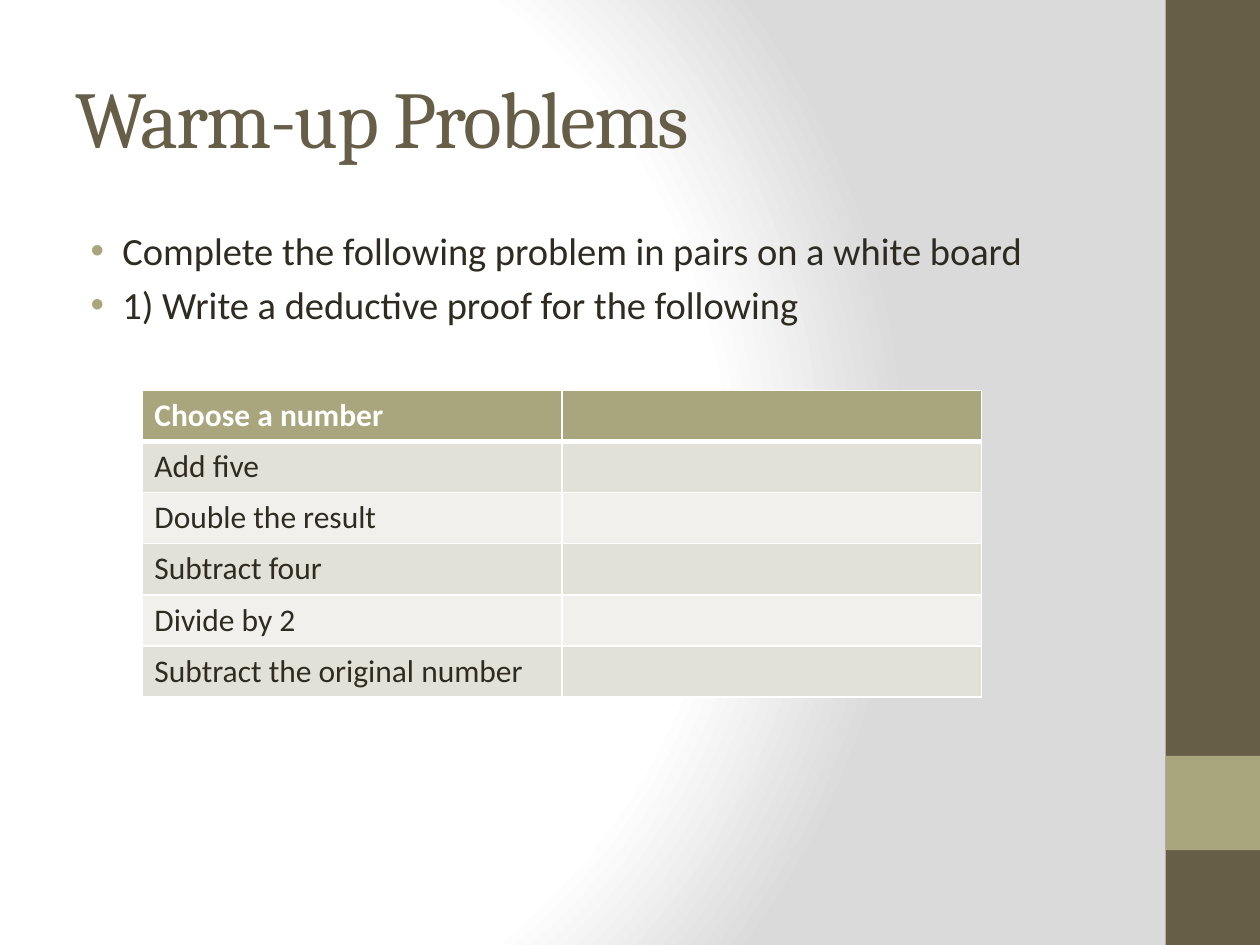
from dataclasses import dataclass

from lxml.etree import SubElement
from pptx import Presentation
from pptx.dml.color import RGBColor
from pptx.enum.shapes import MSO_SHAPE
from pptx.enum.text import MSO_ANCHOR
from pptx.oxml import parse_xml
from pptx.oxml.ns import nsdecls, qn
from pptx.util import Cm, Pt


@dataclass(frozen=True)
class Theme:
    """Colours, fonts and type sizes of the deck."""

    heading_font: str = "Cambria"
    body_font: str = "Calibri"
    title_size: int = 46
    body_size: int = 22
    table_size: int = 18
    dark: str = "675E47"
    accent: str = "A9A57C"
    ink: str = "2F2B20"
    white: str = "FFFFFF"
    grey: str = "DADADA"
    bands: tuple = ("E2E1D7", "F1F0EC")


@dataclass(frozen=True)
class Box:
    """A region in centimetres."""

    left: float
    top: float
    width: float
    height: float

    def lengths(self):
        """Return the region as slide lengths."""
        return Cm(self.left), Cm(self.top), Cm(self.width), Cm(self.height)


THEME = Theme()
BULLETS = (
    "Complete the following problem in pairs on a white board",
    "1) Write a deductive proof for the following",
)
STEPS = (
    "Choose a number",
    "Add five",
    "Double the result",
    "Subtract four",
    "Divide by 2",
    "Subtract the original number",
)


def style(font, name, size, color, bold=False):
    """Set the face, size, colour and weight of a font."""
    font.name, font.size, font.bold = name, Pt(size), bold
    font.color.rgb = RGBColor.from_string(color)


def paint_background(slide):
    """Fill the slide with a circular gradient centred left of the middle."""
    slide.background.fill.gradient()
    old = slide.element.xpath(".//a:gradFill")[0]
    colors = ((0, THEME.white), (75, THEME.white), (100, THEME.grey))
    stops = "".join(
        f'<a:gs pos="{position * 1000}"><a:srgbClr val="{color}"/></a:gs>'
        for position, color in colors
    )
    gradient = parse_xml(
        f'<a:gradFill {nsdecls("a")} rotWithShape="1"><a:gsLst>{stops}</a:gsLst>'
        '<a:path path="circle"><a:fillToRect l="20000" t="50000" r="100000" b="50000"/>'
        "</a:path></a:gradFill>"
    )
    old.getparent().replace(old, gradient)


def add_sidebar(slide, box):
    """Draw the dark side band with its square accent."""
    square = Box(box.left, box.top + box.height * 0.8, box.width, box.width)
    for region, color in ((box, THEME.dark), (square, THEME.accent)):
        shape = slide.shapes.add_shape(MSO_SHAPE.RECTANGLE, *region.lengths())
        shape.shadow.inherit = False
        shape.fill.solid()
        shape.fill.fore_color.rgb = RGBColor.from_string(color)
        shape.line.fill.background()


def add_title(slide, box, text):
    """Place the slide heading, centred vertically in its box."""
    text_frame = slide.shapes.add_textbox(*box.lengths()).text_frame
    text_frame.word_wrap = True
    text_frame.vertical_anchor = MSO_ANCHOR.MIDDLE
    text_frame.text = text
    run = text_frame.paragraphs[0].runs[0]
    style(run.font, THEME.heading_font, THEME.title_size, THEME.dark)
    run.font._element.set("spc", "-100")


def add_bullets(slide, box, lines):
    """Place the bulleted instructions."""
    text_frame = slide.shapes.add_textbox(*box.lengths()).text_frame
    text_frame.word_wrap = True
    text_frame.text = "\n".join(lines)
    for index, paragraph in enumerate(text_frame.paragraphs):
        if index:
            paragraph.space_before = Pt(THEME.body_size * 0.2)
        properties = paragraph._p.get_or_add_pPr()
        properties.set("marL", str(Cm(0.95)))
        properties.set("indent", str(-Cm(0.64)))
        color = SubElement(properties, qn("a:buClr"))
        SubElement(color, qn("a:srgbClr"), val=THEME.accent)
        SubElement(properties, qn("a:buFont"), typeface="Arial")
        SubElement(properties, qn("a:buChar"), char="•")
        style(paragraph.runs[0].font, THEME.body_font, THEME.body_size, THEME.ink)


def add_borders(cell, bottom):
    """Draw white borders around a cell, with a given bottom width in points."""
    properties = cell._tc.get_or_add_tcPr()
    for side, width in (("L", 1), ("R", 1), ("T", 1), ("B", bottom)):
        line = SubElement(properties, qn(f"a:ln{side}"), w=str(Pt(width)))
        fill = SubElement(line, qn("a:solidFill"))
        SubElement(fill, qn("a:srgbClr"), val=THEME.white)


def add_steps_table(slide, box, steps):
    """Place the proof table, with steps on the left and room for work on the right."""
    table = slide.shapes.add_table(len(steps), 2, *box.lengths()).table
    for row_index, step in enumerate(steps):
        header = row_index == 0
        fill = THEME.accent if header else THEME.bands[(row_index - 1) % 2]
        ink = THEME.white if header else THEME.ink
        for cell, text in zip(table.rows[row_index].cells, (step, "")):
            add_borders(cell, 3 if header else 1)
            cell.fill.solid()
            cell.fill.fore_color.rgb = RGBColor.from_string(fill)
            cell.text = text
            paragraph = cell.text_frame.paragraphs[0]
            for font in (paragraph.font, *(run.font for run in paragraph.runs)):
                style(font, THEME.body_font, THEME.table_size, ink, header)


def main():
    """Build and save the presentation."""
    presentation = Presentation()
    presentation.slide_width, presentation.slide_height = Cm(25.4), Cm(19.05)
    slide = presentation.slides.add_slide(presentation.slide_layouts[6])
    paint_background(slide)
    add_sidebar(slide, Box(23.5, 0, 1.9, 19.05))
    add_title(slide, Box(1.27, 0.76, 21.17, 3.18), "Warm-up Problems")
    add_bullets(slide, Box(1.27, 4.45, 21.17, 13.34), BULLETS)
    add_steps_table(slide, Box(2.86, 7.87, 16.93, 6.18), STEPS)
    presentation.save("out.pptx")


if __name__ == "__main__":
    main()
